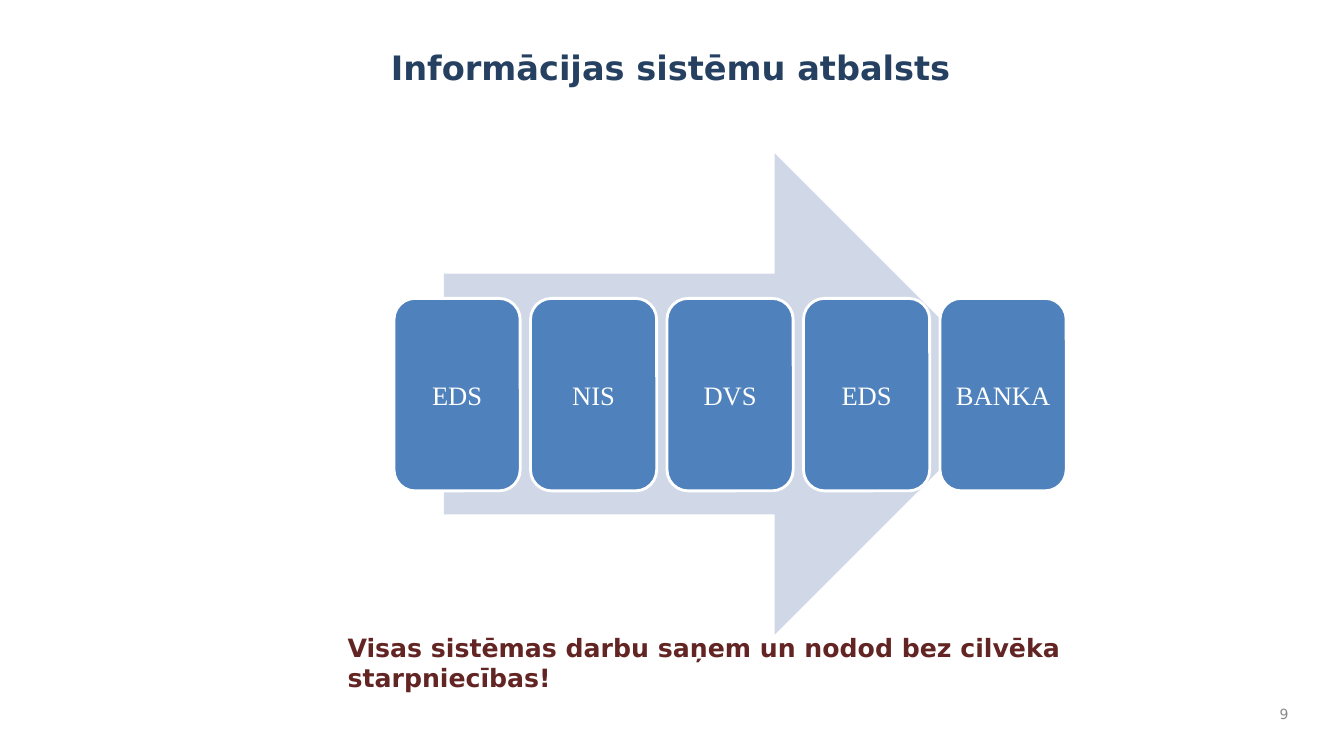
from pptx import Presentation
from pptx.dml.color import RGBColor
from pptx.enum.shapes import MSO_SHAPE
from pptx.enum.text import MSO_ANCHOR, PP_ALIGN
from pptx.util import Cm, Pt

ARROW = MSO_SHAPE.RIGHT_ARROW
ROUNDED = MSO_SHAPE.ROUNDED_RECTANGLE
TOP, MIDDLE = MSO_ANCHOR.TOP, MSO_ANCHOR.MIDDLE
LEFT, CENTER, RIGHT = PP_ALIGN.LEFT, PP_ALIGN.CENTER, PP_ALIGN.RIGHT

SYSTEMS = ["EDS", "NIS", "DVS", "EDS", "BANKA"]
FIRST_LEFT, STEP = 9.93, 3.44


def color(value):
    return RGBColor.from_string(value)


class SlideBuilder:
    heading_font = "DejaVu Sans"
    system_font = "Times New Roman"
    navy = "254061"
    maroon = "632523"
    gray = "898989"
    pale_blue = "D0D8E8"
    blue = "4F81BD"
    white = "FFFFFF"

    def __init__(self, presentation):
        self.slide = presentation.slides.add_slide(presentation.slide_layouts[6])

    def fill_text(self, shape, text, font, size, ink, bold=False, align=LEFT, anchor=TOP):
        frame = shape.text_frame
        frame.word_wrap = True
        frame.vertical_anchor = anchor
        paragraph = frame.paragraphs[0]
        paragraph.alignment = align
        run = paragraph.add_run()
        run.text = text
        run.font.name = font
        run.font.size = Pt(size)
        run.font.bold = bold
        run.font.color.rgb = color(ink)

    def text(self, box, text, size, ink, **style):
        shape = self.slide.shapes.add_textbox(*map(Cm, box))
        self.fill_text(shape, text, self.heading_font, size, ink, **style)

    def shape(self, kind, box, fill, line=None):
        shape = self.slide.shapes.add_shape(kind, *map(Cm, box))
        shape.shadow.inherit = False
        shape.fill.solid()
        shape.fill.fore_color.rgb = color(fill)
        if line:
            shape.line.color.rgb = color(line)
            shape.line.width = Pt(2)
        else:
            shape.line.fill.background()
        return shape

    def system(self, box, name):
        shape = self.shape(ROUNDED, box, self.blue, self.white)
        frame = shape.text_frame
        frame.margin_left = frame.margin_right = Cm(0.2)
        self.fill_text(shape, name, self.system_font, 19, self.white,
                       align=CENTER, anchor=MIDDLE)


def main():
    presentation = Presentation()
    presentation.slide_width = Cm(33.87)
    presentation.slide_height = Cm(19.05)
    builder = SlideBuilder(presentation)

    builder.text((9.6, 1.07, 22.58, 2.87), "Informācijas sistēmu atbalsts",
                 24, builder.navy, bold=True)
    builder.shape(ARROW, (11.19, 3.86, 14.4, 12.14), builder.pale_blue)
    for index, name in enumerate(SYSTEMS):
        builder.system((FIRST_LEFT + index * STEP, 7.52, 3.18, 4.85), name)
    builder.text((31.6, 17.58, 1.12, 0.84), "9", 10, builder.gray,
                 align=RIGHT, anchor=MIDDLE)
    builder.text((8.51, 15.8, 19.18, 1.8),
                 "Visas sistēmas darbu saņem un nodod bez cilvēka starpniecības!",
                 18, builder.maroon, bold=True)

    presentation.save("out.pptx")


if __name__ == "__main__":
    main()
